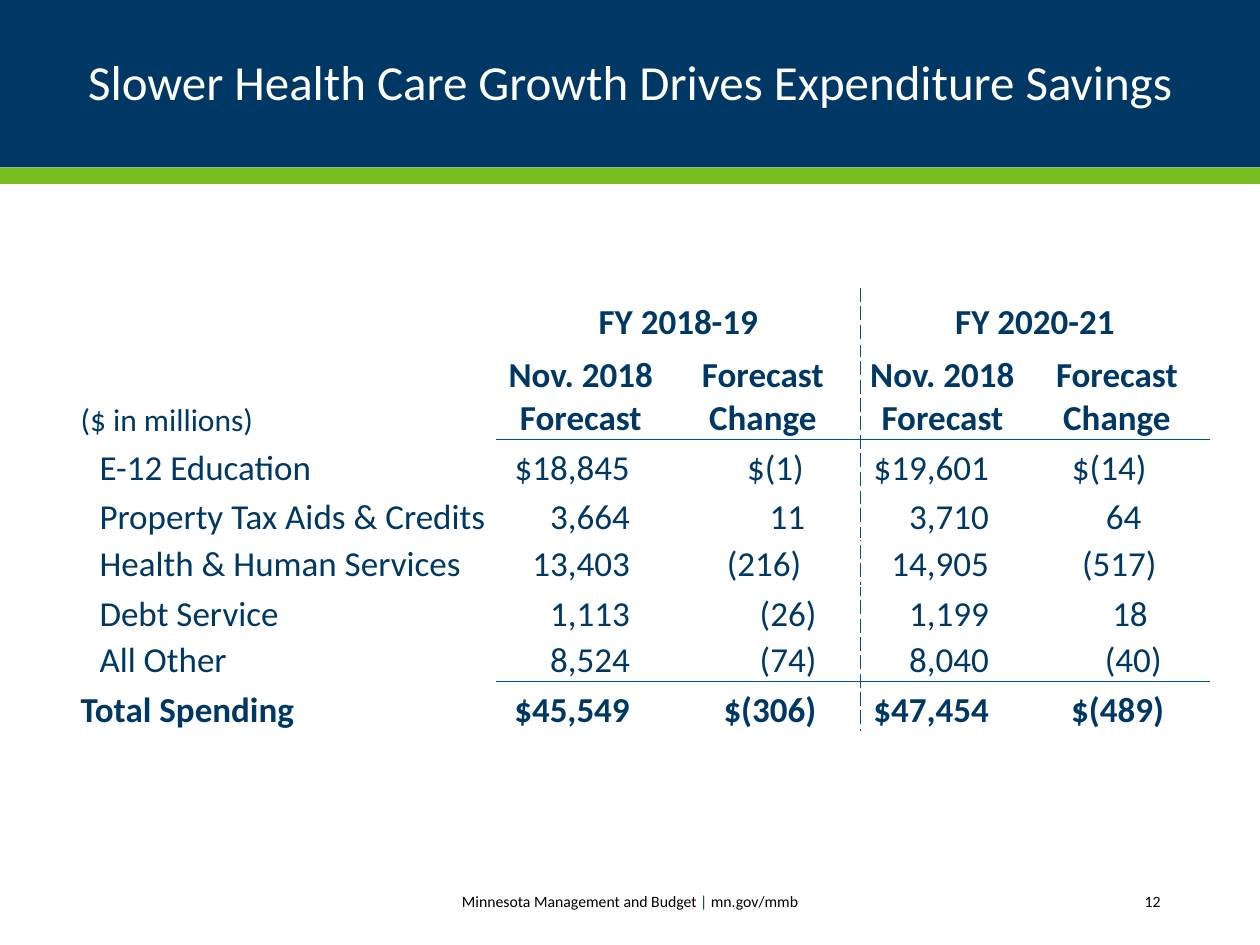
from lxml.etree import SubElement
from pptx import Presentation
from pptx.dml.color import RGBColor
from pptx.enum.shapes import MSO_SHAPE as Shape
from pptx.enum.text import MSO_ANCHOR as Anchor, PP_ALIGN as Align
from pptx.oxml.ns import qn
from pptx.util import Inches, Pt

COLORS = {"navy": "003865", "green": "78BE21", "rule": "004F8E",
          "white": "FFFFFF", "black": "000000"}

COLUMN_WIDTHS = [3.36, 1.34, 1.55, 1.3, 1.47]
ROW_HEIGHTS = [0.44, 0.76, 0.4, 0.39, 0.37, 0.4, 0.36, 0.4]
PERIODS = ["FY 2018-19", "FY 2020-21"]
HEADINGS = ["Nov. 2018\vForecast", "Forecast\vChange"]
SPENDING = [
    ["E-12 Education", "$18,845", "$(1)", "$19,601", "$(14)"],
    ["Property Tax Aids & Credits", "3,664", "11", "3,710", "64"],
    ["Health & Human Services", "13,403", "(216)", "14,905", "(517)"],
    ["Debt Service", "1,113", "(26)", "1,199", "18"],
    ["All Other", "8,524", "(74)", "8,040", "(40)"],
    ["Total Spending", "$45,549", "$(306)", "$47,454", "$(489)"],
]
FORECAST_INSET = 0.28
# Right insets of the two change columns, one pair per spending row
CHANGE_INSETS = [(0.45, 0.5), (0.44, 0.54), (0.47, 0.42),
                 (0.35, 0.49), (0.35, 0.38), (0.35, 0.36)]
FIRST_ROW = 2
TOTAL_ROW = len(ROW_HEIGHTS) - 1
RULED_ROWS = (1, TOTAL_ROW - 1)
DIVIDER_COLUMN = 2


def add_run(paragraph, text, size, color, bold=False):
    run = paragraph.add_run()
    run.text = text
    font_format = {"name": "Calibri", "size": Pt(size), "bold": bold}
    for name, value in font_format.items():
        setattr(run.font, name, value)
    run.font.color.rgb = RGBColor.from_string(COLORS[color])


def add_band(slide, top, height, color):
    band = slide.shapes.add_shape(
        Shape.RECTANGLE, 0, Inches(top), Inches(10), Inches(height))
    band.shadow.inherit = False
    band.fill.solid()
    band.fill.fore_color.rgb = RGBColor.from_string(COLORS[color])
    band.line.fill.background()


def add_header(slide, left, top, width, height):
    add_band(slide, 0, 1.33, "navy")
    add_band(slide, 1.33, 0.13, "green")
    title = slide.shapes.title
    slide.shapes._spTree.append(title._element)  # in front of the bands
    box = {"left": left, "top": top, "width": width, "height": height}
    for name, value in box.items():
        setattr(title, name, Inches(value))
    title.text_frame.vertical_anchor = Anchor.MIDDLE
    paragraph = title.text_frame.paragraphs[0]
    paragraph.alignment = Align.CENTER
    paragraph.line_spacing = 0.9
    add_run(paragraph, "Slower Health Care Growth Drives Expenditure Savings",
            28, "white")


def add_footer_text(slide, left, width, alignment, parts):
    box = slide.shapes.add_textbox(
        Inches(left), Inches(6.95), Inches(width), Inches(0.4))
    box.text_frame.word_wrap = True
    box.text_frame.vertical_anchor = Anchor.MIDDLE
    paragraph = box.text_frame.paragraphs[0]
    paragraph.alignment = alignment
    for text, color in parts:
        add_run(paragraph, text, 9, color)


def fill_cell(cell, text, alignment, left=0, right=0, size=20, bold=False):
    cell_format = {"vertical_anchor": Anchor.BOTTOM,
                   "margin_left": Inches(left), "margin_right": Inches(right),
                   "margin_top": 0, "margin_bottom": 0}
    for name, value in cell_format.items():
        setattr(cell, name, value)
    paragraph = cell.text_frame.paragraphs[0]
    paragraph.alignment = alignment
    for index, line in enumerate(text.split("\v")):
        if index:
            paragraph.add_line_break()
        add_run(paragraph, line, size, "navy", bold)


def draw_borders(cell, row, column):
    """Rule the edges of a cell; the XML order must be L, R, T, B, fill."""
    ruled = column > 0
    edges = {"L": column == DIVIDER_COLUMN + 1,
             "R": column == DIVIDER_COLUMN,
             "T": ruled and row - 1 in RULED_ROWS,
             "B": ruled and row in RULED_ROWS}
    properties = cell._tc.get_or_add_tcPr()
    for side, drawn in edges.items():
        if drawn:
            line = SubElement(properties, qn(f"a:ln{side}"), w=str(Pt(1)))
            fill = SubElement(line, qn("a:solidFill"))
            SubElement(fill, qn("a:srgbClr"), val=COLORS["rule"])
            dash = "sysDash" if side in "LR" else "solid"
            SubElement(line, qn("a:prstDash"), val=dash)
    cell.fill.background()


def add_spending_table(slide, left, top):
    table = slide.shapes.add_table(
        len(ROW_HEIGHTS), len(COLUMN_WIDTHS), Inches(left), Inches(top),
        Inches(sum(COLUMN_WIDTHS)), Inches(sum(ROW_HEIGHTS))).table
    table.first_row = table.horz_banding = False
    for column, width in zip(table.columns, COLUMN_WIDTHS):
        column.width = Inches(width)
    for row, height in zip(table.rows, ROW_HEIGHTS):
        row.height = Inches(height)
    for row in range(len(ROW_HEIGHTS)):
        for column in range(len(COLUMN_WIDTHS)):
            draw_borders(table.cell(row, column), row, column)

    for index, period in enumerate(PERIODS):
        first = 1 + index * len(HEADINGS)
        table.cell(0, first).merge(table.cell(0, first + 1))
        fill_cell(table.cell(0, first), period, Align.CENTER, bold=True)
        for offset, heading in enumerate(HEADINGS):
            fill_cell(table.cell(1, first + offset), heading, Align.CENTER,
                      bold=True)
    fill_cell(table.cell(1, 0), "($ in millions)", Align.LEFT, 0.06, size=18)

    for row, (label, *amounts) in enumerate(SPENDING, FIRST_ROW):
        total = row == TOTAL_ROW
        fill_cell(table.cell(row, 0), label, Align.LEFT,
                  0.06 if total else 0.21, bold=total)
        change, next_change = CHANGE_INSETS[row - FIRST_ROW]
        insets = [FORECAST_INSET, change, FORECAST_INSET, next_change]
        for column, (amount, inset) in enumerate(zip(amounts, insets), 1):
            fill_cell(table.cell(row, column), amount, Align.RIGHT,
                      right=inset, bold=total)


def main():
    deck = Presentation()
    deck.slide_width, deck.slide_height = Inches(10), Inches(7.5)
    slide = deck.slides.add_slide(deck.slide_layouts[5])
    add_header(slide, 0.4, 0.17, 9.2, 1)
    add_spending_table(slide, 0.58, 2.29)
    add_footer_text(slide, 2.71, 4.58, Align.CENTER, [
        ("Minnesota Management and Budget ", "black"), ("|", "navy"),
        (" mn.gov/mmb", "black")])
    add_footer_text(slide, 8.11, 1.2, Align.RIGHT, [("12", "black")])
    deck.save("out.pptx")


if __name__ == "__main__":
    main()
